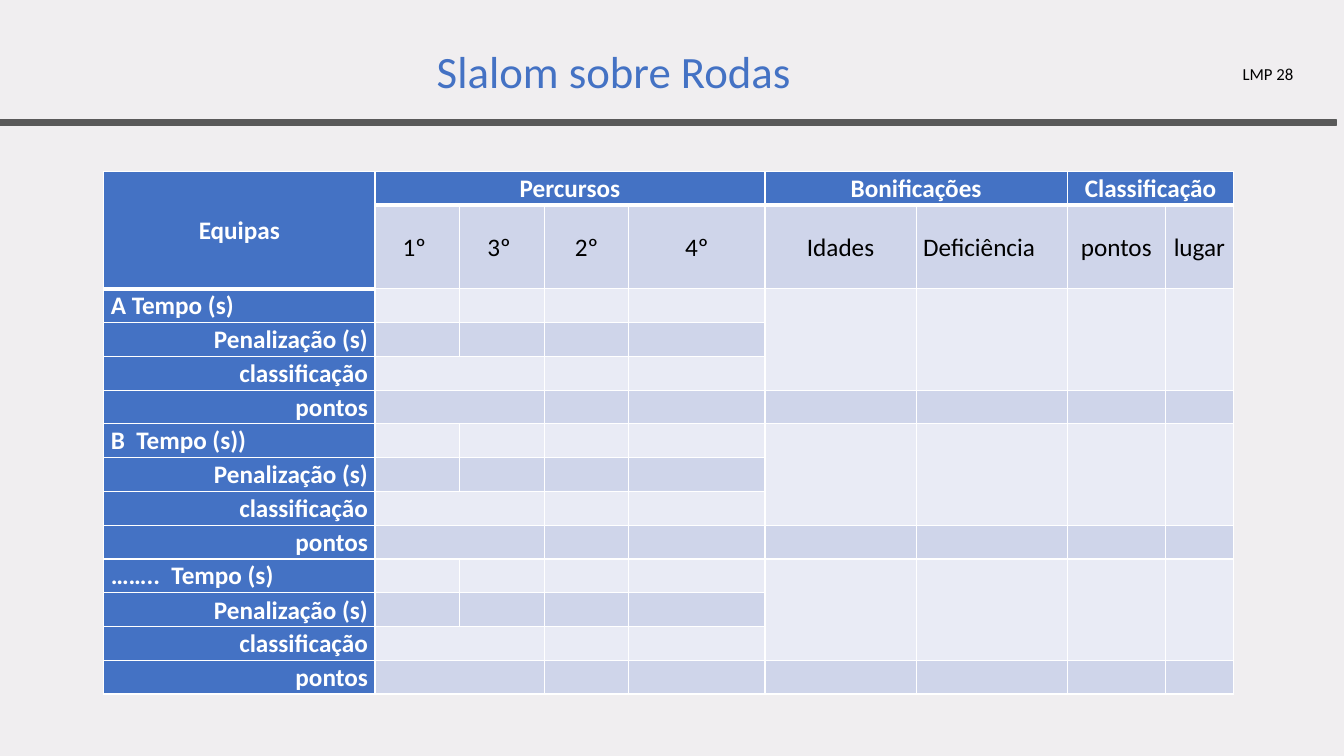
from dataclasses import dataclass

from lxml import etree
from pptx import Presentation
from pptx import util as u
from pptx.dml.color import RGBColor
from pptx.enum import shapes, text
from pptx.oxml.ns import qn


@dataclass(frozen=True)
class Theme:
    font: str = "Calibri"
    page: str = "F0EEF0"
    rule: str = "595959"
    accent: str = "4472C4"
    band_dark: str = "CFD5EA"
    band_light: str = "E9EBF5"
    white: str = "FFFFFF"
    black: str = "000000"
    title_size: int = 32
    table_size: int = 18
    code_size: int = 12


THEME = Theme()
UNIT = u.Inches(1 / 12)  # grid of 160 columns by 90 rows
ALIGN = text.PP_ALIGN
MIDDLE, TOP = text.MSO_ANCHOR.MIDDLE, text.MSO_ANCHOR.TOP

# Table content and grid
COLUMNS = [32.28, 10.08, 10.08, 10.08, 16.2, 18, 18, 11.64, 8.16]
SUBHEAD_HEIGHT = 9.96
GROUPS = [(1, 4, "Percursos"), (5, 6, "Bonificações"), (7, 8, "Classificação")]
SUBHEADS = ["1º ", "3º ", "2º", "4º", "Idades", "Deficiência", "pontos", "lugar"]
TEAMS = ["A Tempo (s)", "B  Tempo (s))", "……..  Tempo (s)"]
MEASURES = ["Penalização (s)", "classificação", "pontos"]
TEAM_ROWS = 1 + len(MEASURES)
ROW_COUNT = 2 + len(TEAMS) * TEAM_ROWS


def cells(*lengths):
    return [round(length * UNIT) for length in lengths]


def paint(fill, color):
    fill.solid()
    fill.fore_color.rgb = RGBColor.from_string(color)


def write(paragraph, words, size, color, align, bold=False):
    paragraph.alignment = align
    run = paragraph.add_run()
    run.text = words
    formats = {"name": THEME.font, "size": u.Pt(size), "bold": bold}
    for name, value in formats.items():
        setattr(run.font, name, value)
    run.font.color.rgb = RGBColor.from_string(color)


def header(slide, box):
    left, top, width, height = box
    # Title
    title = slide.shapes.title
    places = dict(zip(("left", "top", "width", "height"),
                      cells(left + 24, top + 4.56, 98.16, 7.68)))
    for name, value in places.items():
        setattr(title, name, value)
    title.text_frame.vertical_anchor = TOP
    write(title.text_frame.paragraphs[0], "Slalom sobre Rodas",
          THEME.title_size, THEME.accent, ALIGN.CENTER)

    # Rule along the foot of the header
    rule = slide.shapes.add_shape(shapes.MSO_SHAPE.RECTANGLE,
                                  *cells(left, top + height - 0.6, width, 0.6))
    rule.shadow.inherit = False
    paint(rule.fill, THEME.rule)
    paint(rule.line.fill, THEME.rule)
    rule.line.width = u.Pt(1)

    # Sheet code
    code = slide.shapes.add_textbox(*cells(left + 146.76, top + 6.96, 9.96, 3.6))
    code.text_frame.word_wrap = True
    write(code.text_frame.paragraphs[0], "LMP 28",
          THEME.code_size, THEME.black, ALIGN.LEFT)


def draw_borders(cell, thick_sides):
    properties = cell._tc.get_or_add_tcPr()
    for index, side in enumerate(("lnL", "lnR", "lnT", "lnB")):
        width = u.Pt(3 if side in thick_sides else 1)
        border = etree.Element(qn(f"a:{side}"), w=str(width))
        fill = etree.SubElement(border, qn("a:solidFill"))
        etree.SubElement(fill, qn("a:srgbClr"), val=THEME.white)
        properties.insert(index, border)


def style_cell(cell, row, column):
    if row == 0 or column == 0:
        color = THEME.accent
    else:
        color = THEME.band_dark if row % 2 else THEME.band_light
    paint(cell.fill, color)
    formats = {"margin_left": u.Inches(0.07), "margin_right": u.Inches(0.07),
               "margin_top": 0, "margin_bottom": 0, "vertical_anchor": MIDDLE}
    for name, value in formats.items():
        setattr(cell, name, value)
    header_end = 1 if column == 0 else 0
    thick = {header_end: ["lnB"], header_end + 1: ["lnT"]}
    draw_borders(cell, thick.get(row, []))


def fill_cell(cell, words, align, color=THEME.white, bold=True):
    paragraph = cell.text_frame.paragraphs[0]
    paragraph.line_spacing = 1.05
    paragraph.space_after = u.Pt(3)
    write(paragraph, words, THEME.table_size, color, align, bold)


def score_table(slide, box):
    table = slide.shapes.add_table(ROW_COUNT, len(COLUMNS), *cells(*box)).table
    table.first_row = table.horz_banding = False
    for column, width in zip(table.columns, cells(*COLUMNS)):
        column.width = width
    row_height = (box[3] - SUBHEAD_HEIGHT) / (ROW_COUNT - 1)
    for index, row in enumerate(table.rows):
        row.height, = cells(SUBHEAD_HEIGHT if index == 1 else row_height)
        for column in range(len(COLUMNS)):
            style_cell(table.cell(index, column), index, column)

    # Headings
    table.cell(0, 0).merge(table.cell(1, 0))
    fill_cell(table.cell(0, 0), "Equipas", ALIGN.CENTER)
    for first, last, heading in GROUPS:
        table.cell(0, first).merge(table.cell(0, last))
        fill_cell(table.cell(0, first), heading, ALIGN.CENTER)
    for column, subhead in enumerate(SUBHEADS, 1):
        align = ALIGN.JUSTIFY if subhead == "Deficiência" else ALIGN.CENTER
        fill_cell(table.cell(1, column), subhead, align, THEME.black, False)

    # Four rows per team
    for number, team in enumerate(TEAMS):
        start = 2 + number * TEAM_ROWS
        fill_cell(table.cell(start, 0), team, ALIGN.JUSTIFY)
        table.cell(start, 0).vertical_anchor = TOP
        for row, measure in enumerate(MEASURES, start + 1):
            fill_cell(table.cell(row, 0), measure, ALIGN.RIGHT)
        for column in range(5, len(COLUMNS)):
            table.cell(start, column).merge(table.cell(start + 2, column))
        for row in (start + 2, start + 3):
            table.cell(row, 1).merge(table.cell(row, 2))


def main():
    deck = Presentation()
    deck.slide_width, deck.slide_height = cells(160, 90)
    slide = deck.slides.add_slide(deck.slide_layouts[5])
    paint(slide.background.fill, THEME.page)
    header(slide, (0, 0, 159.12, 14.88))
    score_table(slide, (12.36, 20.4, sum(COLUMNS), 62.28))
    deck.save("out.pptx")


if __name__ == "__main__":
    main()
